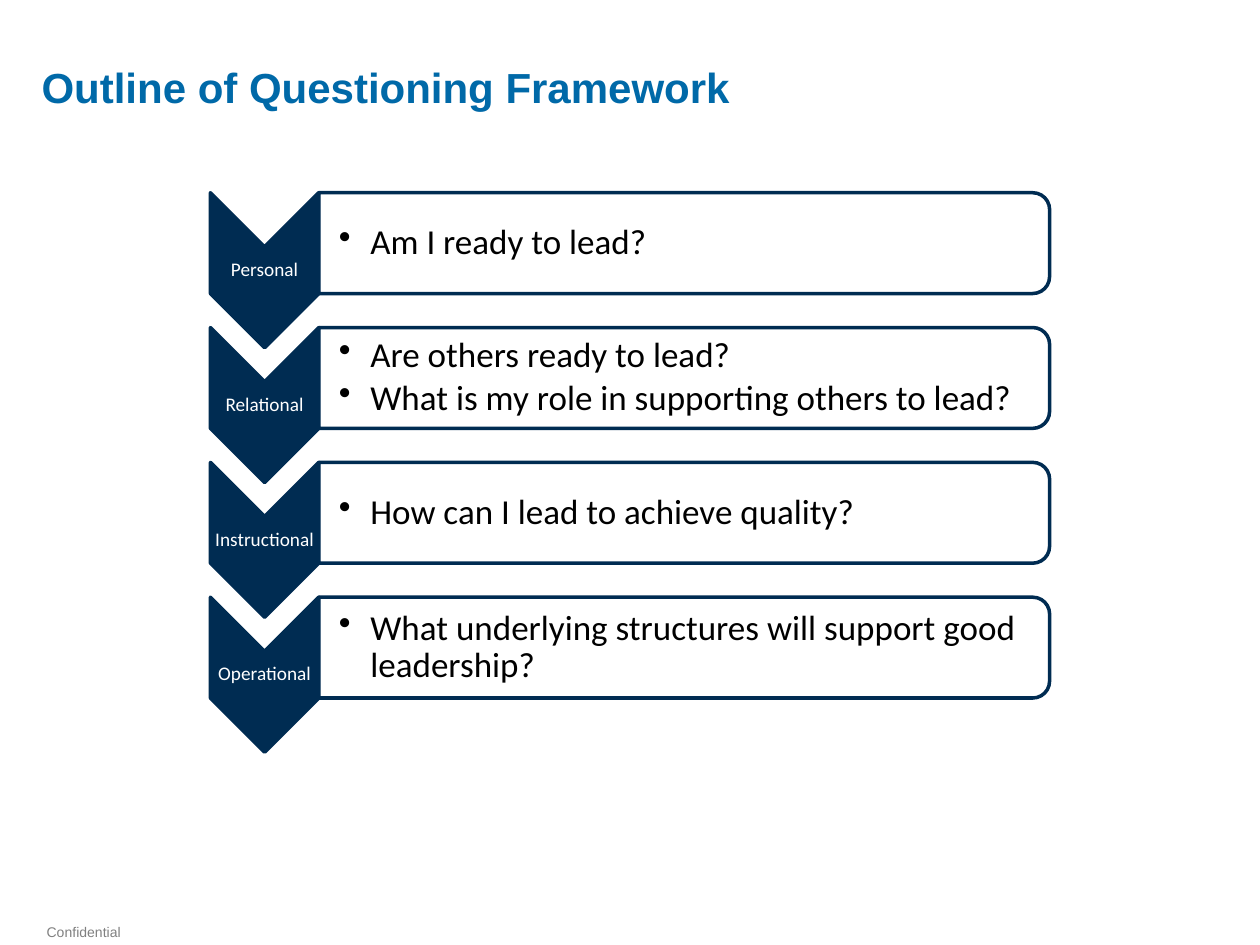
from lxml import etree
from pptx import Presentation
from pptx.dml.color import RGBColor
from pptx.enum import shapes, text
from pptx.oxml.ns import qn
from pptx.util import Inches, Pt

NAVY = RGBColor(0x00, 0x2C, 0x52)
BLUE = RGBColor(0x00, 0x69, 0xA8)
GREY = RGBColor(0x80, 0x80, 0x80)
BLACK = RGBColor(0, 0, 0)
WHITE = RGBColor(0xFF, 0xFF, 0xFF)

ROWS = [
    ("Personal", ["Am I ready to lead?"]),
    ("Relational", ["Are others ready to lead?",
                    "What is my role in supporting others to lead?"]),
    ("Instructional", ["How can I lead to achieve quality?"]),
    ("Operational", ["What underlying structures will support good leadership?"]),
]


def set_frame(tf, left=0.0, other=0.0):
    tf.word_wrap = True
    tf.auto_size = text.MSO_AUTO_SIZE.NONE
    tf.vertical_anchor = text.MSO_ANCHOR.MIDDLE
    tf.margin_left = Inches(left)
    tf.margin_top = tf.margin_right = tf.margin_bottom = Inches(other)


def add_run(p, words, font, size, color, bold=False):
    r = p.add_run()
    r.text = words
    r.font.name, r.font.size, r.font.bold = font, Pt(size), bold
    r.font.color.rgb = color


def add_bullet(p):
    pPr = p._p.get_or_add_pPr()
    pPr.set("marL", str(Inches(0.25)))
    pPr.set("indent", str(-Inches(0.25)))
    etree.SubElement(pPr, qn("a:buChar")).set("char", "•")


def add_text(parent, x, y, w, h):
    return parent.add_textbox(Inches(x), Inches(y), Inches(w), Inches(h)).text_frame


def add_turned(parent, kind, x, y, w, h, fill):
    """Add a shape turned by 90 degrees that fills the box x, y, w, h as seen."""
    sp = parent.add_shape(kind, Inches(x + (w - h) / 2), Inches(y + (h - w) / 2),
                          Inches(h), Inches(w))
    sp.rotation = 90
    sp.shadow.inherit = False
    sp.fill.solid()
    sp.fill.fore_color.rgb = fill
    sp.line.color.rgb = NAVY
    sp.line.width = Pt(2)
    return sp


def add_title(s, x, y, w, h):
    title = s.shapes.title
    title.left, title.top, title.width, title.height = map(Inches, (x, y, w, h))
    set_frame(title.text_frame, 0.05, 0.05)
    p = title.text_frame.paragraphs[0]
    p.alignment = text.PP_ALIGN.LEFT
    p.line_spacing = 0.9
    add_run(p, "Outline of Questioning Framework", "Arial", 24, BLUE, True)


def add_row(parent, x, y, w, label, questions):
    arrow_w, arrow_h, bar_h = 0.86, 1.23, 0.8

    # Downward chevron and its label
    add_turned(parent, shapes.MSO_SHAPE.CHEVRON, x, y, arrow_w, arrow_h, NAVY)
    tf = add_text(parent, x, y + arrow_w / 2, arrow_w, arrow_h - arrow_w)
    set_frame(tf, 0.01, 0.01)
    p = tf.paragraphs[0]
    p.alignment = text.PP_ALIGN.CENTER
    p.line_spacing = 0.9
    add_run(p, label, "Calibri", 11, WHITE)

    # Bar with rounded right end
    bar_x, bar_w = x + arrow_w, w - arrow_w
    bar = add_turned(parent, shapes.MSO_SHAPE.ROUND_2_SAME_RECTANGLE,
                     bar_x, y, bar_w, bar_h, WHITE)
    color = bar._element.spPr.find(qn("a:solidFill"))[0]
    etree.SubElement(color, qn("a:alpha")).set("val", "90000")

    # Questions
    tf = add_text(parent, bar_x, y + 0.04, bar_w - 0.04, bar_h - 0.08)
    set_frame(tf, 0.16, 0.01)
    for i, question in enumerate(questions):
        p = tf.add_paragraph() if i else tf.paragraphs[0]
        add_bullet(p)
        p.line_spacing = 0.9
        if i:
            p.space_before = Pt(3)
        add_run(p, question, "Calibri", 20, BLACK)


def add_framework(s, x, y, w, pitch):
    group = s.shapes.add_group_shape()
    for i, (label, questions) in enumerate(ROWS):
        add_row(group.shapes, x, y + i * pitch, w, label, questions)


def add_footer(s, x, y, w, h):
    tf = add_text(s.shapes, x, y, w, h)
    set_frame(tf)
    add_run(tf.paragraphs[0], "Confidential", "Arial", 8, GREY)


def main():
    prs = Presentation()
    prs.slide_width, prs.slide_height = Inches(10), Inches(7.5)
    s = prs.slides.add_slide(prs.slide_layouts[5])
    add_footer(s, 0.37, 7.33, 4.65, 0.14)
    add_title(s, 0.28, 0.28, 6.17, 0.87)
    add_framework(s, 1.67, 1.53, 6.66, 1.07)
    prs.save("out.pptx")


if __name__ == "__main__":
    main()
